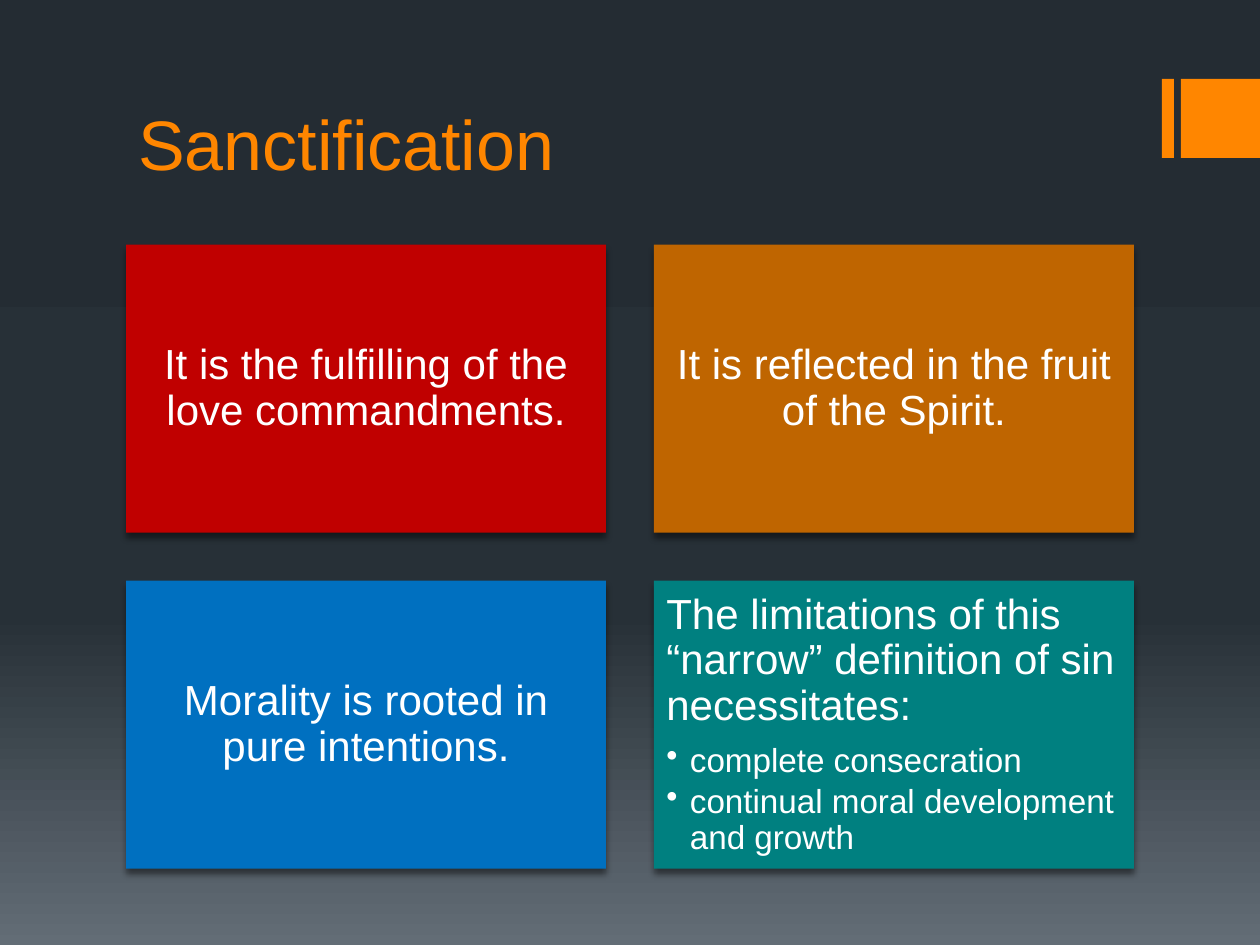
from copy import deepcopy

from lxml.etree import SubElement
from pptx import Presentation
from pptx.dml.color import RGBColor
from pptx.enum.shapes import MSO_SHAPE
from pptx.enum.text import MSO_ANCHOR, PP_ALIGN
from pptx.oxml.ns import qn
from pptx.util import Pt

COLORS = {
    "night": "242C33",
    "slate": "273037",
    "mist": "636D76",
    "orange": "FF8600",
    "red": "C00000",
    "amber": "BF6500",
    "blue": "0070C0",
    "teal": "008080",
    "white": "FFFFFF",
    "black": "000000",
}
FONT = "Arial"
CARDS = [
    ("red", "It is the fulfilling of the love commandments.", []),
    ("amber", "It is reflected in the fruit of the Spirit.", []),
    ("blue", "Morality is rooted in pure intentions.", []),
    (
        "teal",
        "The limitations of this “narrow” definition of sin necessitates:",
        ["complete consecration", "continual moral development and growth"],
    ),
]


def rgb(name):
    return RGBColor.from_string(COLORS[name])


def write_text(paragraph, text, size, color, align=PP_ALIGN.LEFT,
               line_spacing=None, space_after=0, bullet=False):
    paragraph.alignment = align
    paragraph.line_spacing = line_spacing
    paragraph.space_after = Pt(space_after)
    run = paragraph.add_run()
    run.text = text
    run.font.name = FONT
    run.font.size = Pt(size)
    run.font.color.rgb = rgb(color)
    if bullet:
        paragraph.level = 1
        properties = paragraph._p.get_or_add_pPr()
        properties.set("marL", str(Pt(13.5)))
        properties.set("indent", str(-Pt(13.5)))
        SubElement(properties, qn("a:buChar")).set("char", "•")


def add_block(slide, left, top, width, height, color):
    shape = slide.shapes.add_shape(
        MSO_SHAPE.RECTANGLE, Pt(left), Pt(top), Pt(width), Pt(height))
    shape.shadow.inherit = False
    shape.fill.solid()
    shape.fill.fore_color.rgb = rgb(color)
    shape.line.fill.background()
    return shape


def add_drop_shadow(shape):
    effects = shape._element.spPr.find(qn("a:effectLst"))
    shadow = SubElement(effects, qn("a:outerShdw"), blurRad=str(Pt(3.8)),
                        dist=str(Pt(3)), dir="5400000", rotWithShape="0")
    color = SubElement(shadow, qn("a:srgbClr"), val=COLORS["black"])
    SubElement(color, qn("a:alpha"), val="48000")


def paint_background(slide):
    fill = slide.background.fill
    fill.gradient()
    fill.gradient_angle = 270
    stop_list = slide.element.xpath(".//a:gsLst")[0]
    stop_list.append(deepcopy(stop_list[-1]))
    stops = [(0, "night"), (0.65, "slate"), (1, "mist")]
    for stop, (position, color) in zip(fill.gradient_stops, stops):
        stop.position = position
        stop.color.rgb = rgb(color)


def add_corner_tab(slide, left, top, width, height):
    add_block(slide, left, top, 6.8, height, "orange")
    add_block(slide, left + width - height, top, height, height, "orange")


def add_title(slide, left, top, width, height, text):
    box = slide.shapes.add_textbox(Pt(left), Pt(top), Pt(width), Pt(height))
    frame = box.text_frame
    frame.word_wrap = True
    frame.vertical_anchor = MSO_ANCHOR.BOTTOM
    write_text(frame.paragraphs[0], text, 40, "orange")


def add_card(slide, left, top, width, height, color, statement, points):
    card = add_block(slide, left, top, width, height, color)
    add_drop_shadow(card)
    frame = card.text_frame
    frame.word_wrap = True
    frame.margin_left = frame.margin_right = Pt(7.2)
    frame.margin_top = frame.margin_bottom = Pt(7.2)
    frame.vertical_anchor = MSO_ANCHOR.TOP if points else MSO_ANCHOR.MIDDLE
    write_text(frame.paragraphs[0], statement, 24, "white",
               align=PP_ALIGN.LEFT if points else PP_ALIGN.CENTER,
               line_spacing=0.9, space_after=8.4)
    for point in points:
        write_text(frame.add_paragraph(), point, 19, "white",
                   line_spacing=0.9, space_after=2.85, bullet=True)


def add_card_grid(slide, left, top, width, height, cards, columns=2, gap=27.4):
    rows = len(cards) // columns
    card_width = (width - gap * (columns - 1)) / columns
    card_height = (height - gap * (rows - 1)) / rows
    for index, card in enumerate(cards):
        row, column = divmod(index, columns)
        add_card(slide, left + column * (card_width + gap),
                 top + row * (card_height + gap),
                 card_width, card_height, *card)


def main():
    presentation = Presentation()
    presentation.slide_width = Pt(720)
    presentation.slide_height = Pt(540)
    slide = presentation.slides.add_slide(presentation.slide_layouts[6])
    paint_background(slide)
    add_corner_tab(slide, 664, 45, 56, 45.2)
    add_title(slide, 72, 18, 576, 90.7, "Sanctification")
    add_card_grid(slide, 72, 139.8, 576, 356.6, CARDS)
    presentation.save("out.pptx")


if __name__ == "__main__":
    main()
